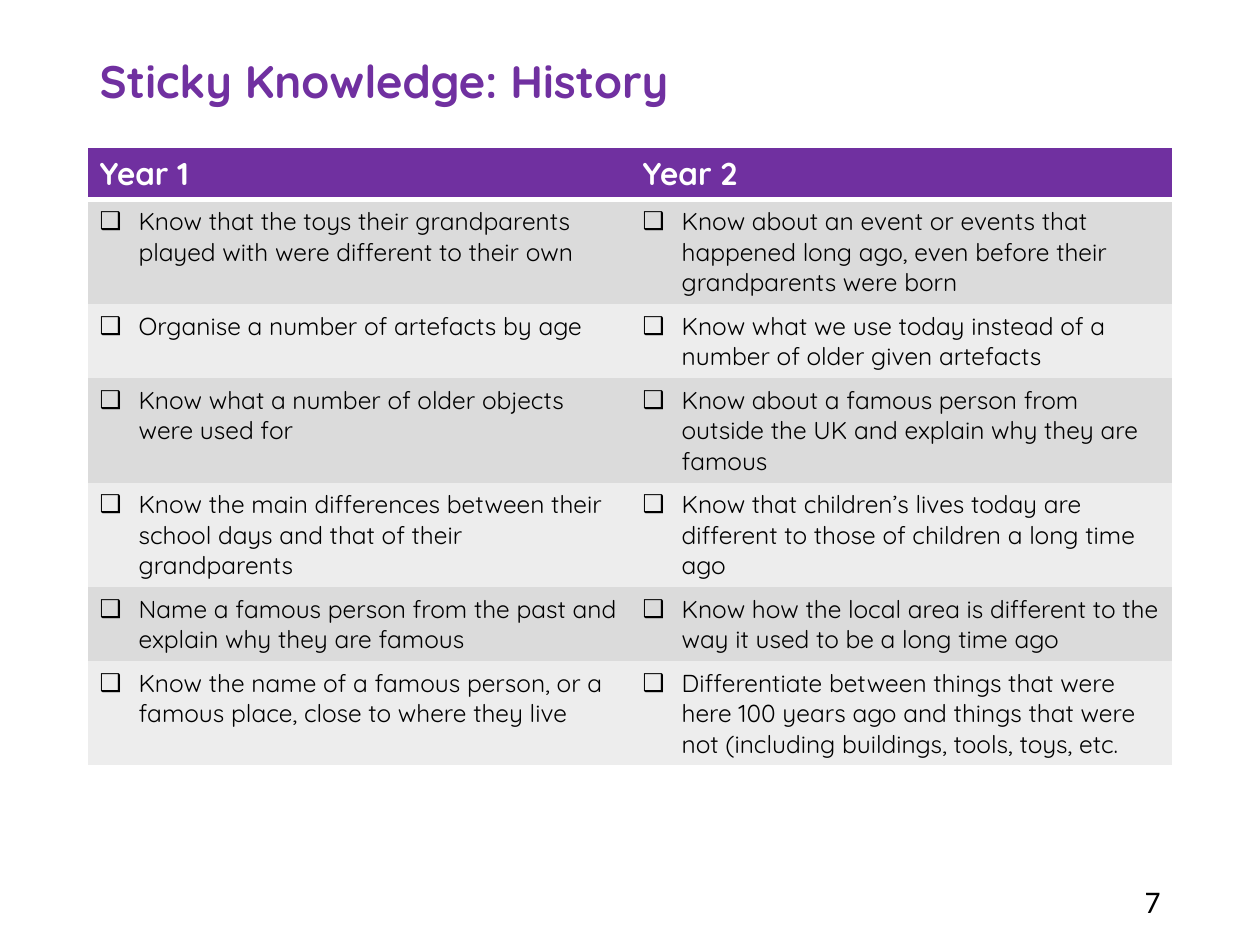
from pptx import Presentation
from pptx.dml.color import RGBColor
from pptx.enum.text import MSO_ANCHOR, PP_ALIGN
from pptx.oxml import parse_xml
from pptx.oxml.ns import nsdecls
from pptx.util import Inches, Pt

THEME = {
    "purple": RGBColor.from_string("7030A0"),
    "white": RGBColor.from_string("FFFFFF"),
    "black": RGBColor.from_string("000000"),
    "bands": [RGBColor.from_string("DBDBDB"), RGBColor.from_string("EDEDED")],
    "font": "Quicksand",
    "number_font": "Calibri",
    "title_size": Pt(26),
    "header_size": Pt(18),
    "body_size": Pt(14),
}
TITLE_FORMAT = {"name": THEME["font"], "size": THEME["title_size"], "bold": True}
HEADER_FORMAT = {"name": THEME["font"], "size": THEME["header_size"], "bold": True}
BODY_FORMAT = {"name": THEME["font"], "size": THEME["body_size"], "bold": False}
NUMBER_FORMAT = {"name": THEME["number_font"], "size": THEME["header_size"]}

YEARS = [
    ("Year 1", "Year 2"),
    ("Know that the toys their grandparents played with were different to their own",
     "Know about an event or events that happened long ago, even before their grandparents were born"),
    ("Organise a number of artefacts by age",
     "Know what we use today instead of a number of older given artefacts"),
    ("Know what a number of older objects were used for",
     "Know about a famous person from outside the UK and explain why they are famous"),
    ("Know the main differences between their school days and that of their grandparents",
     "Know that children’s lives today are different to those of children a long time ago"),
    ("Name a famous person from the past and explain why they are famous",
     "Know how the local area is different to the way it used to be a long time ago"),
    ("Know the name of a famous person, or a famous place, close to where they live",
     "Differentiate between things that were here 100 years ago and things that were "
     "not (including buildings, tools, toys, etc."),
]


def write(paragraph, text, font_format, color):
    run = paragraph.add_run()
    run.text = text
    for attribute, value in font_format.items():
        setattr(run.font, attribute, value)
    run.font.color.rgb = color


def set_borders(cell, widths):
    """Draw white borders; widths maps L, R, T and B to points, 0 for no line."""
    properties = cell._tc.get_or_add_tcPr()
    for side, width in widths.items():
        paint = (f'<a:solidFill><a:srgbClr val="{THEME["white"]}"/></a:solidFill>'
                 if width else "<a:noFill/>")
        properties.append(parse_xml(
            f'<a:ln{side} {nsdecls("a")} w="{Pt(width)}">{paint}</a:ln{side}>'))


prs = Presentation()
prs.slide_width, prs.slide_height = Inches(10), Inches(7.5)
slide = prs.slides.add_slide(prs.slide_layouts[5])
left, width = Inches(0.69), Inches(8.62)

title = slide.shapes.title
title.left, title.top, title.width, title.height = left, Inches(0.4), width, Inches(0.53)
title.text_frame.vertical_anchor = MSO_ANCHOR.MIDDLE
title.text_frame.word_wrap = True
heading = title.text_frame.paragraphs[0]
heading.alignment = PP_ALIGN.LEFT
heading.line_spacing = 0.9
write(heading, "Sticky Knowledge: History", TITLE_FORMAT, THEME["purple"])

# Rows start at one line and grow with their text.
table_height = Inches(4.97)
knowledge_frame = slide.shapes.add_table(len(YEARS), 2, left, Inches(1.17), width, table_height)
knowledge = knowledge_frame.table
knowledge.horz_banding = False
for row in knowledge.rows:
    row.height = Inches(0.41)
knowledge_frame.height = table_height

last_row = len(YEARS) - 1
for row_index, statements in enumerate(YEARS):
    for column_index, statement in enumerate(statements):
        cell = knowledge.cell(row_index, column_index)
        set_borders(cell, {
            "L": 1 if column_index == 0 else 0,
            "R": 1 if column_index == 1 else 0,
            "T": {0: 1, 1: 3}.get(row_index, 0),
            "B": {0: 3, last_row: 1}.get(row_index, 0),
        })
        cell.fill.solid()
        paragraph = cell.text_frame.paragraphs[0]
        if row_index == 0:
            cell.fill.fore_color.rgb = THEME["purple"]
            write(paragraph, statement, HEADER_FORMAT, THEME["white"])
            continue
        cell.fill.fore_color.rgb = THEME["bands"][(row_index - 1) % 2]
        write(paragraph, statement, BODY_FORMAT, THEME["black"])
        bullet = paragraph._p.get_or_add_pPr()
        bullet.set("marL", str(Inches(0.31)))
        bullet.set("indent", str(-Inches(0.31)))
        bullet.append(parse_xml(f'<a:buFont {nsdecls("a")} typeface="Arial"/>'))
        bullet.append(parse_xml(f'<a:buChar {nsdecls("a")} char="❑"/>'))

page_number = slide.shapes.add_textbox(Inches(7.06), Inches(6.95), Inches(2.25), Inches(0.4))
page_number.text_frame.word_wrap = True
page_number.text_frame.vertical_anchor = MSO_ANCHOR.MIDDLE
page_number.text_frame.paragraphs[0].alignment = PP_ALIGN.RIGHT
write(page_number.text_frame.paragraphs[0], "7", NUMBER_FORMAT, THEME["black"])

prs.save("out.pptx")
